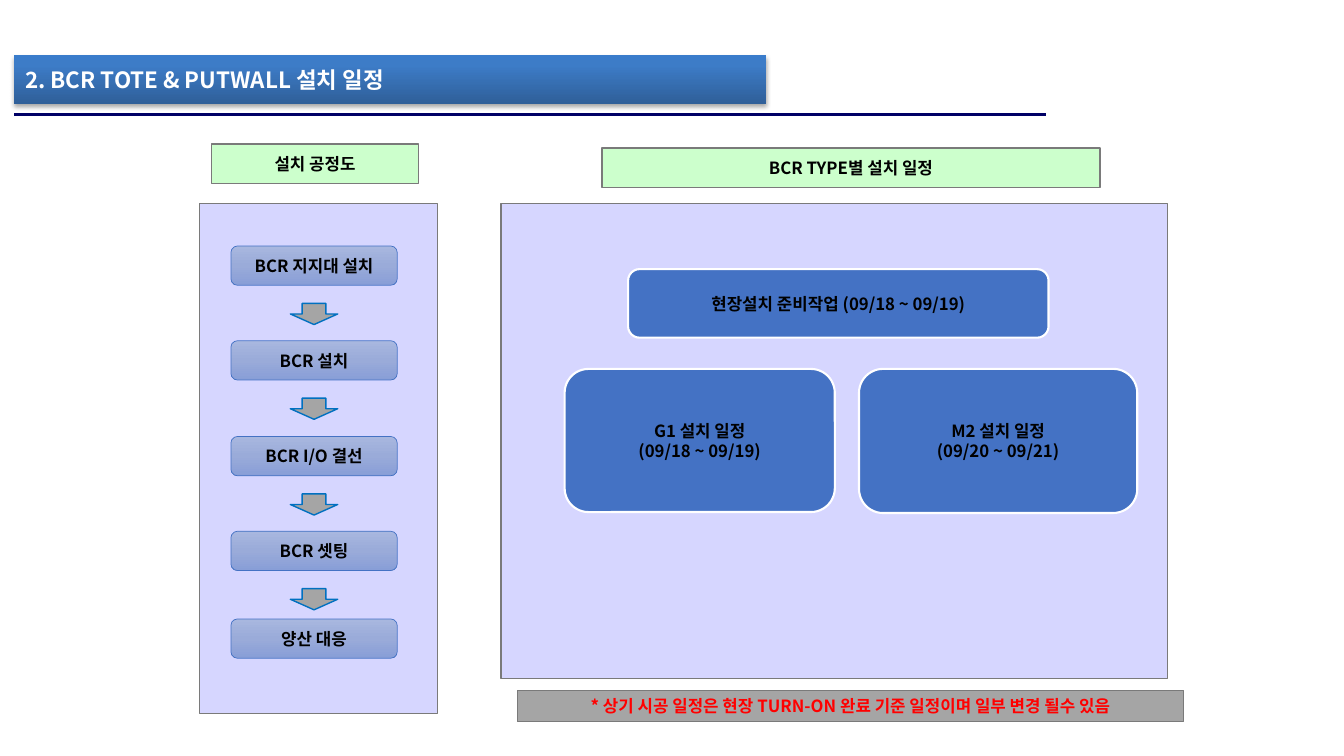
from lxml.etree import SubElement
from pptx import Presentation
from pptx.dml.color import RGBColor
from pptx.enum.shapes import MSO_CONNECTOR, MSO_SHAPE
from pptx.enum.text import MSO_ANCHOR, MSO_AUTO_SIZE, PP_ALIGN
from pptx.oxml.ns import qn
from pptx.util import Pt

EMU_PER_PX = 9144  # 100 px to the inch
FONT = "Noto Sans CJK KR"
COLORS = {
    "panel": "3333FF", "border": "7A7A7A", "heading": "CCFFCC",
    "rule": "000066", "blue": "4472C4", "gray": "A5A5A5",
    "arrow_line": "0070C0", "black": "000000", "white": "FFFFFF", "red": "FF0000",
}
TITLE_STOPS = ((0, "2F5F99"), (80, "3D7CC7"), (100, "3A7CCB"))
STEP_STOPS = ((0, "A8B7DF"), (50, "9AABD9"), (100, "889ED7"))


def px(length):
    return length * EMU_PER_PX


def color(name):
    return RGBColor.from_string(COLORS[name])


def write_text(shape, text, size=12, ink="black", align=PP_ALIGN.CENTER, insets=(0, 5, 0, 5)):
    frame = shape.text_frame
    frame.text = text
    frame.word_wrap = True
    frame.auto_size = MSO_AUTO_SIZE.NONE
    frame.vertical_anchor = MSO_ANCHOR.MIDDLE
    frame.margin_left, frame.margin_top, frame.margin_right, frame.margin_bottom = map(px, insets)
    for paragraph in frame.paragraphs:
        paragraph.alignment = align
        for run in paragraph.runs:
            run.font.size = Pt(size)
            run.font.bold = True
            run.font.color.rgb = color(ink)
            run.font.name = FONT
            SubElement(run.font._element, qn("a:ea"), typeface=FONT)


class SlideBuilder:
    def __init__(self, slide):
        self.slide = slide

    def gradient(self, shape, stops, angle):
        shape.fill.gradient()
        shape.fill.gradient_angle = angle
        stop_list = shape.element.spPr.find(".//" + qn("a:gsLst"))
        for stop in list(stop_list):
            stop_list.remove(stop)
        for position, value in stops:
            stop = SubElement(stop_list, qn("a:gs"), pos=str(position * 1000))
            SubElement(stop, qn("a:srgbClr"), val=value)

    def title(self, text, left, top, width, height):
        shape = self.slide.shapes.title
        shape.left, shape.top, shape.width, shape.height = map(px, (left, top, width, height))
        self.gradient(shape, TITLE_STOPS, 90)
        shape.shadow.inherit = False
        effects = shape.element.spPr.find(qn("a:effectLst"))
        shadow = SubElement(effects, qn("a:outerShdw"), blurRad=str(Pt(3.1)),
                            dist=str(Pt(1.8)), dir="5400000", rotWithShape="0")
        shade = SubElement(shadow, qn("a:srgbClr"), val=COLORS["black"])
        SubElement(shade, qn("a:alpha"), val="35000")
        write_text(shape, text, size=16, ink="white", align=PP_ALIGN.LEFT, insets=(11, 7, 7, 7))

    def rule(self, left, top, right):
        line = self.slide.shapes.add_connector(
            MSO_CONNECTOR.STRAIGHT, px(left), px(top), px(right), px(top))
        line.line.color.rgb = color("rule")
        line.line.width = Pt(2.25)
        SubElement(line.element.spPr, qn("a:effectLst"))

    def shape(self, kind, box, fill=None, line="border", weight=1, text=None, ink="black"):
        shape = self.slide.shapes.add_shape(kind, *map(px, box))
        shape.shadow.inherit = False
        if fill:
            shape.fill.solid()
            shape.fill.fore_color.rgb = color(fill)
        shape.line.color.rgb = color(line)
        shape.line.width = Pt(weight)
        if text:
            write_text(shape, text, ink=ink)
        return shape

    def panel(self, *box):
        shape = self.shape(MSO_SHAPE.RECTANGLE, box, "panel")
        fill_color = shape.element.spPr.find(qn("a:solidFill")).find(qn("a:srgbClr"))
        SubElement(fill_color, qn("a:alpha"), val="20000")

    def bar(self, text, *box, fill="heading", ink="black"):
        self.shape(MSO_SHAPE.RECTANGLE, box, fill, text=text, ink=ink)

    def step(self, text, top):
        shape = self.shape(MSO_SHAPE.ROUNDED_RECTANGLE, (229, top, 165, 39),
                           line="blue", weight=0.5, text=text)
        self.gradient(shape, STEP_STOPS, 270)

    def arrow(self, top):
        self.shape(MSO_SHAPE.DOWN_ARROW, (288, top, 47, 21), "gray", line="arrow_line")

    def schedule(self, text, *box):
        self.shape(MSO_SHAPE.ROUNDED_RECTANGLE, box, "blue", line="white", weight=1.5, text=text)


def main():
    presentation = Presentation()
    presentation.slide_width, presentation.slide_height = px(1333), px(750)
    builder = SlideBuilder(presentation.slides.add_slide(presentation.slide_layouts[5]))

    # Title
    builder.title("2. BCR TOTE & PUTWALL 설치 일정", 14, 55, 746, 48)
    builder.rule(14, 114, 1037)

    # Panels and headings
    builder.panel(497, 202, 661, 471)
    builder.panel(198, 202, 236, 506)
    builder.bar("설치 공정도", 210, 143, 205, 39)
    builder.bar("BCR TYPE별 설치 일정", 597, 147, 494, 39)

    # Installation steps, with an arrow after each but the last
    for index, text in enumerate(("BCR 지지대 설치", "BCR 설치", "BCR I/O 결선", "BCR 셋팅")):
        offset = index * 189 // 2
        builder.step(text, 244 + offset)
        builder.arrow(301 + offset)
    builder.step("양산 대응", 614)

    # Schedule by type
    builder.schedule("현장설치 준비작업 (09/18 ~ 09/19)", 623, 267, 417, 68)
    builder.schedule("G1 설치 일정\n(09/18 ~ 09/19)", 560, 366, 268, 142)
    builder.schedule("M2 설치 일정\n(09/20 ~ 09/21)", 852, 366, 276, 143)

    # Note
    builder.bar("* 상기 시공 일정은 현장 TURN-ON 완료 기준 일정이며 일부 변경 될수 있음",
                513, 685, 661, 31, fill="gray", ink="red")

    presentation.save("out.pptx")


if __name__ == "__main__":
    main()
